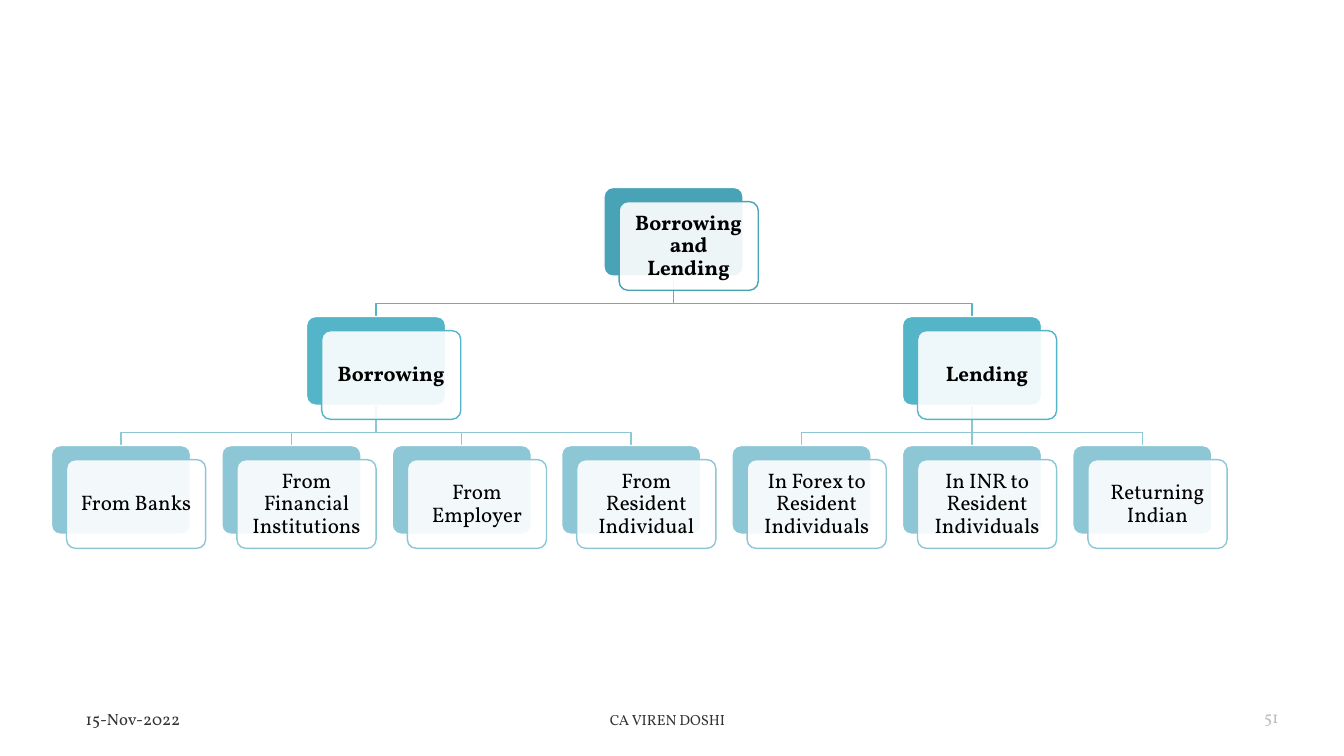
from lxml.etree import SubElement
from pptx import Presentation
from pptx.dml.color import RGBColor
from pptx.enum.shapes import MSO_CONNECTOR, MSO_SHAPE
from pptx.enum.text import MSO_ANCHOR, PP_ALIGN
from pptx.oxml.ns import qn
from pptx.util import Inches, Pt

FONT = "Vollkorn"
COLORS = {"root": "49A3B6", "branch": "54B5C9", "leaf": "8DC6D5",
          "white": "FFFFFF", "black": "000000"}
LEVEL_COLORS = ["root", "branch", "leaf"]

TREE = ("Borrowing and Lending", [
    ("Borrowing", [
        ("From Banks", []),
        ("From Financial Institutions", []),
        ("From Employer", []),
        ("From Resident Individual", []),
    ]),
    ("Lending", [
        ("In Forex to Resident Individuals", []),
        ("In INR to Resident Individuals", []),
        ("Returning Indian", []),
    ]),
])

# text, left, width, size, opacity, alignment, anchor
FOOTERS = [
    ("15-Nov-2022", 0.75, 4.5, 12, 80, PP_ALIGN.LEFT, MSO_ANCHOR.MIDDLE),
    ("CA VIREN DOSHI", 3.87, 5.5, 10.5, 80, PP_ALIGN.CENTER, MSO_ANCHOR.MIDDLE),
    ("51", 9.54, 3.24, 12, 25, PP_ALIGN.RIGHT, MSO_ANCHOR.BOTTOM),
]
FOOTER_TOP, FOOTER_HEIGHT = 7.01, 0.25

CARD_WIDTH, CARD_HEIGHT = 1.38, 0.88
FRONT_RIGHT, FRONT_DOWN = 0.15, 0.14
FIRST_LEFT, FIRST_TOP = 0.51, 1.86
COLUMN_STEP, LEVEL_STEP = 1.688, 1.28
BEND_DROP = 0.27


def rgb(name):
    return RGBColor.from_string(COLORS[name])


def set_opacity(fill_element, percent):
    color = next(fill_element.iter(qn("a:srgbClr")))
    SubElement(color, qn("a:alpha")).set("val", str(percent * 1000))


def write_text(shape, text, size, align, anchor, inset=None, bold=False, opacity=100):
    frame = shape.text_frame
    formats = {"word_wrap": True, "vertical_anchor": anchor}
    if inset is not None:
        for side in ("left", "right", "top", "bottom"):
            formats[f"margin_{side}"] = Inches(inset)
    for name, value in formats.items():
        setattr(frame, name, value)
    paragraph = frame.paragraphs[0]
    paragraph.alignment = align
    run = paragraph.add_run()
    run.text = text
    for name, value in {"name": FONT, "size": Pt(size), "bold": bold}.items():
        setattr(run.font, name, value)
    run.font.color.rgb = rgb("black")
    if opacity < 100:
        set_opacity(run.font.fill._xPr, opacity)
    return paragraph


def place_nodes(node, level=0, column=0):
    """Return the placed node and the next free column; parents centre over children."""
    text, children = node
    placed = []
    for child in children:
        placed_child, column = place_nodes(child, level + 1, column)
        placed.append(placed_child)
    if placed:
        left = (placed[0]["left"] + placed[-1]["left"]) / 2
    else:
        left = FIRST_LEFT + column * COLUMN_STEP
        column += 1
    return {"text": text, "level": level, "left": round(left, 2),
            "top": FIRST_TOP + level * LEVEL_STEP, "children": placed}, column


def walk(node):
    yield node
    for child in node["children"]:
        yield from walk(child)


def draw_branch(shapes, parent, child):
    start_x, end_x = (node["left"] + CARD_WIDTH / 2 for node in (parent, child))
    start_y, end_y = parent["top"] + CARD_HEIGHT, child["top"]
    bend_y = start_y + BEND_DROP
    if abs(start_x - end_x) < 0.02:
        line = shapes.add_connector(MSO_CONNECTOR.STRAIGHT, Inches(start_x), Inches(start_y),
                                    Inches(start_x), Inches(end_y))
        SubElement(line._element.spPr, qn("a:effectLst"))
    else:
        builder = shapes.build_freeform(Inches(start_x), Inches(start_y))
        corners = [(start_x, bend_y), (end_x, bend_y), (end_x, end_y)]
        builder.add_line_segments([(Inches(x), Inches(y)) for x, y in corners], close=False)
        line = builder.convert_to_shape()
        line.fill.background()
        line.shadow.inherit = False
    line.line.color.rgb = rgb(LEVEL_COLORS[child["level"]])
    line.line.width = Pt(1)


def draw_card(shapes, left, top, fill, outline):
    card = shapes.add_shape(MSO_SHAPE.ROUNDED_RECTANGLE, Inches(left), Inches(top),
                            Inches(CARD_WIDTH), Inches(CARD_HEIGHT))
    card.adjustments[0] = 0.1
    card.shadow.inherit = False
    card.fill.solid()
    card.fill.fore_color.rgb = rgb(fill)
    card.line.color.rgb = rgb(outline)
    card.line.width = Pt(1)
    return card


def draw_node(shapes, node):
    color = LEVEL_COLORS[node["level"]]
    draw_card(shapes, node["left"], node["top"], color, "white")
    front = draw_card(shapes, node["left"] + FRONT_RIGHT, node["top"] + FRONT_DOWN,
                      "white", color)
    set_opacity(front._element.spPr.find(qn("a:solidFill")), 90)
    paragraph = write_text(front, node["text"], 15, PP_ALIGN.CENTER, MSO_ANCHOR.MIDDLE,
                           inset=0.06, bold=bool(node["children"]))
    paragraph.line_spacing = 0.9


def main():
    presentation = Presentation()
    presentation.slide_width, presentation.slide_height = Inches(13.33), Inches(7.5)
    blank_layout = presentation.slide_layouts[6]
    shapes = presentation.slides.add_slide(blank_layout).shapes

    for text, left, width, size, opacity, align, anchor in FOOTERS:
        footer = shapes.add_textbox(Inches(left), Inches(FOOTER_TOP),
                                    Inches(width), Inches(FOOTER_HEIGHT))
        write_text(footer, text, size, align, anchor, opacity=opacity)

    root, _ = place_nodes(TREE)
    nodes = list(walk(root))
    for parent in nodes:
        for child in parent["children"]:
            draw_branch(shapes, parent, child)
    for node in nodes:
        draw_node(shapes, node)

    presentation.save("out.pptx")


if __name__ == "__main__":
    main()
